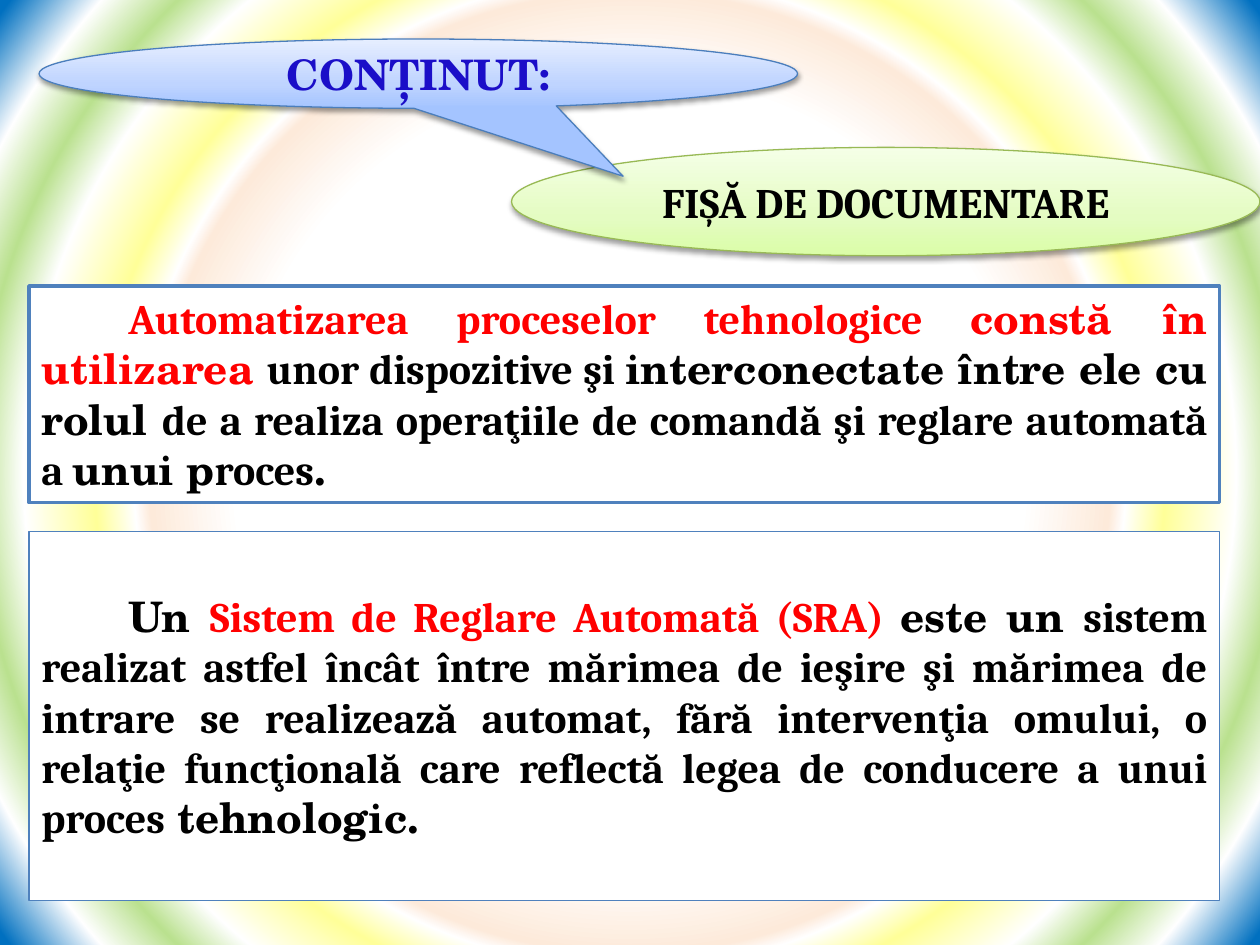
from lxml import etree
from pptx import Presentation
from pptx.dml.color import RGBColor
from pptx.enum import shapes, text
from pptx.oxml.ns import qn
from pptx.util import Inches, Pt

COLORS = {
    "white": "FFFFFF", "black": "000000", "red": "FF0000", "indigo": "1B0EC8",
    "blue": "4F81BD", "callout_line": "4B7EBC", "green_line": "98B955",
}
GREENS = [(0, "DAFDA7"), (35, "E4FCC2"), (100, "F5FFE7")]
BLUES = [(0, "A4C4FF"), (35, "BFD4FF"), (100, "E6EEFF")]
RINGS = [(50, "FFFFFF"), (61, "FDEADA"), (63, "FFFFFF"), (68, "FFFF99"),
         (77, "FFFFFF"), (83, "BAE18F"), (90, "FFFFFF"), (99, "0070C0")]
CAMBRIA, SCHOLA = "Cambria", "TeX Gyre Schola"


def set_stops(grad, stops):
    """Replace the colour stops of a gradFill element."""
    gs_list = grad.find(qn("a:gsLst"))
    for old in list(gs_list):
        gs_list.remove(old)
    for pos, color in stops:
        gs = etree.SubElement(gs_list, qn("a:gs"), pos=str(pos * 1000))
        etree.SubElement(gs, qn("a:srgbClr"), val=color)


def write(s, runs, align, anchor, indent=0):
    """Fill a shape with one paragraph of (text, font, colour) runs."""
    tf = s.text_frame
    tf.word_wrap = True
    tf.vertical_anchor = anchor
    p = tf.paragraphs[0]
    p.alignment = align
    if indent:
        p._p.get_or_add_pPr().set("indent", str(Inches(indent)))
    for words, font, color in runs:
        r = p.add_run()
        r.text = words
        r.font.name = font
        r.font.size = Pt(24)
        r.font.bold = True
        r.font.color.rgb = RGBColor.from_string(COLORS[color])


prs = Presentation()
prs.slide_width, prs.slide_height = Inches(10), Inches(7.5)
slide = prs.slides.add_slide(prs.slide_layouts[6])

# Background of concentric rings
slide.background.fill.gradient()
grad = slide.background._cSld.find(".//" + qn("a:gradFill"))
set_stops(grad, RINGS)
lin = grad.find(qn("a:lin"))
circle = etree.Element(qn("a:path"), path="circle")
etree.SubElement(circle, qn("a:fillToRect"), l="50000", t="50000", r="50000", b="50000")
grad.replace(lin, circle)

# Definition boxes
automation = [
    ("Automatizarea proceselor tehnologice ", CAMBRIA, "red"),
    ("constă în utilizarea ", SCHOLA, "red"),
    ("unor dispozitive şi ", CAMBRIA, "black"),
    ("interconectate între ele cu rolul ", SCHOLA, "black"),
    ("de a realiza operaţiile de comandă şi reglare automată a ", CAMBRIA, "black"),
    ("unui p", SCHOLA, "black"),
    ("roces", CAMBRIA, "black"),
    (".", SCHOLA, "black"),
]
control_system = [
    ("Un ", SCHOLA, "black"),
    ("Sistem de Reglare Automată (SRA) ", CAMBRIA, "red"),
    ("este un ", SCHOLA, "black"),
    ("sistem realizat astfel încât între mărimea de ieşire şi mărimea de intrare "
     "se realizează automat, fără intervenţia omului, o relaţie funcţională care "
     "reflectă legea de conducere a unui proces", CAMBRIA, "black"),
    (" tehnologic.", SCHOLA, "black"),
]
boxes = [
    (2.27, 1.72, 2, text.MSO_ANCHOR.TOP, automation),
    (4.22, 2.93, 0.75, text.MSO_ANCHOR.MIDDLE, control_system),
]
for top, height, line, anchor, runs in boxes:
    s = slide.shapes.add_shape(shapes.MSO_SHAPE.RECTANGLE, Inches(0.23), Inches(top),
                               Inches(9.45), Inches(height))
    s.shadow.inherit = False
    s.fill.solid()
    s.fill.fore_color.rgb = RGBColor.from_string(COLORS["white"])
    s.line.color.rgb = RGBColor.from_string(COLORS["blue"])
    s.line.width = Pt(line)
    write(s, runs, text.PP_ALIGN.JUSTIFY, anchor, indent=0.69)

# Heading bubbles
bubbles = [
    (shapes.MSO_SHAPE.OVAL, (4.06, 1.17, 5.94, 0.86), [], GREENS, "green_line",
     ("FIȘĂ DE DOCUMENTARE", CAMBRIA, "black")),
    (shapes.MSO_SHAPE.OVAL_CALLOUT, (0.31, 0.31, 6.02, 0.55), [0.27, 1.48], BLUES,
     "callout_line", ("CONȚINUT:", SCHOLA, "indigo")),
]
for kind, place, adjustments, stops, line, run in bubbles:
    s = slide.shapes.add_shape(kind, *map(Inches, place))
    for i, value in enumerate(adjustments):
        s.adjustments[i] = value
    s.fill.gradient()
    s.fill.gradient_angle = 90
    set_stops(s._element.spPr.find(qn("a:gradFill")), stops)
    s.line.color.rgb = RGBColor.from_string(COLORS[line])
    s.line.width = Pt(0.75)
    s.shadow.inherit = False
    shadow = etree.SubElement(s._element.spPr.find(qn("a:effectLst")), qn("a:outerShdw"),
                              blurRad=str(Pt(3.1)), dist=str(Pt(1.6)), dir="5400000",
                              rotWithShape="0")
    color = etree.SubElement(shadow, qn("a:srgbClr"), val=COLORS["black"])
    etree.SubElement(color, qn("a:alpha"), val="38000")
    write(s, [run], text.PP_ALIGN.CENTER, text.MSO_ANCHOR.MIDDLE)

prs.save("out.pptx")
